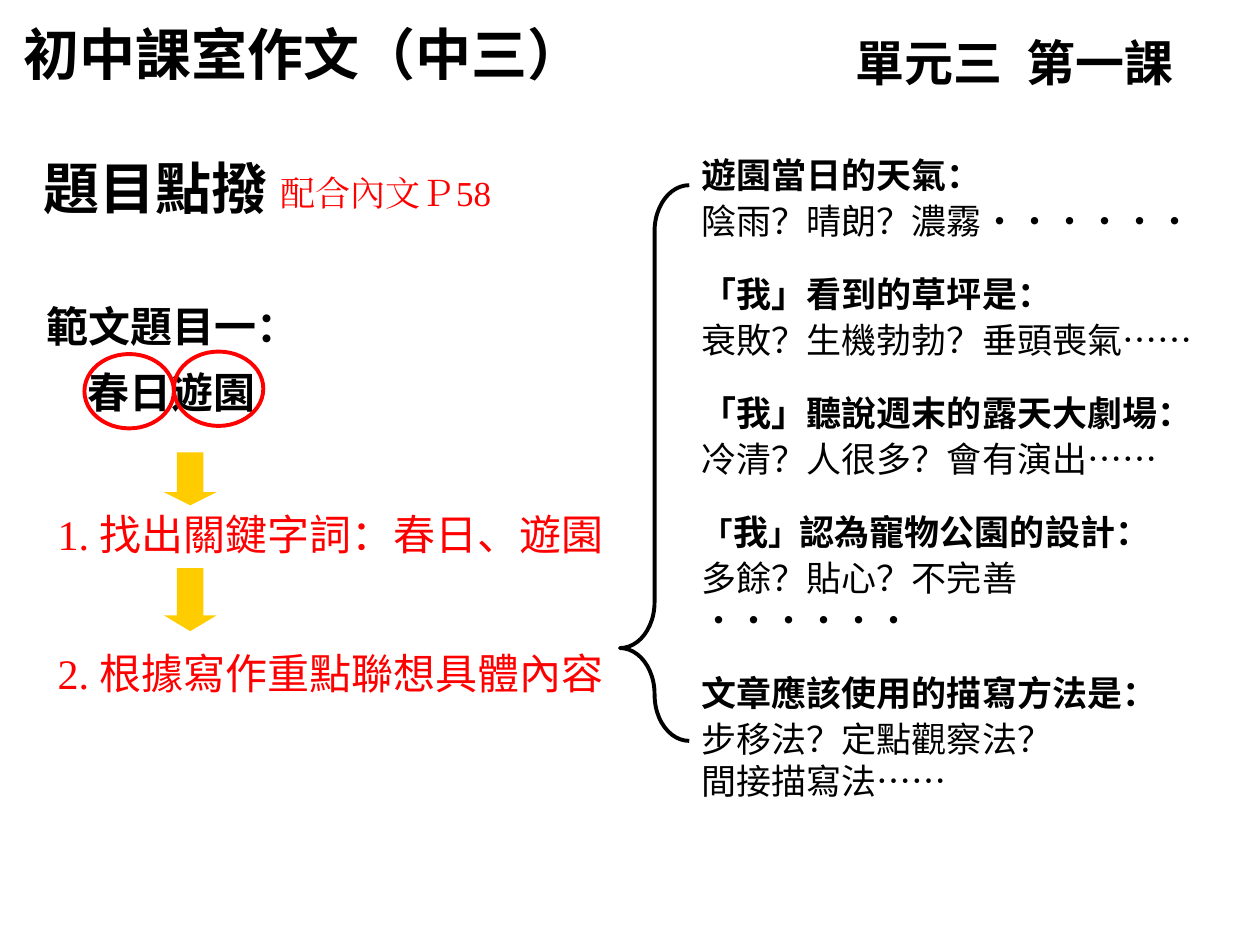
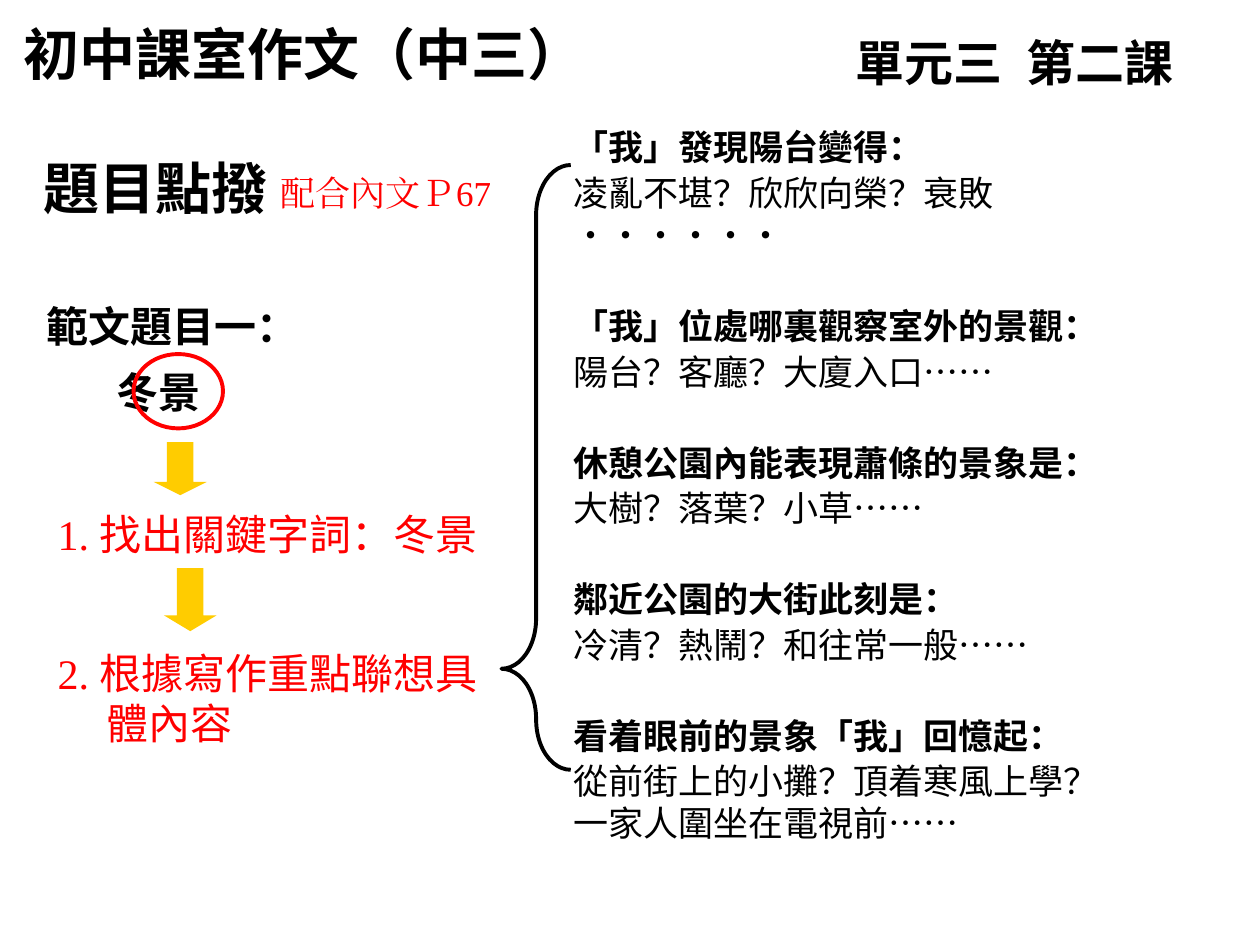
from dataclasses import dataclass

from lxml import etree
from pptx import Presentation
from pptx import util as u
from pptx.dml.color import RGBColor
from pptx.enum import shapes, text
from pptx.oxml import ns


@dataclass(frozen=True)
class Theme:
    """Colours, fonts and type sizes shared by the slides."""
    ink: str = "000000"
    accent: str = "FF0000"
    arrow: str = "FFCC00"
    title_font: str = "Karla"
    label_font: str = "Arial"
    cjk_font: str = "DejaVu Sans"
    dots_font: str = "Noto Sans CJK SC"
    number_font: str = "Times New Roman"
    title: int = 32
    lesson: int = 28
    step: int = 24
    body: int = 20
    small: int = 18
    line: float = 2.25


T = Theme()


@dataclass(frozen=True)
class Box:
    """A rectangle in inches."""
    x: float
    y: float
    w: float
    h: float

    def inner(self, dx, dy, w, h):
        """Return a box placed relative to this one."""
        return Box(self.x + dx, self.y + dy, w, h)

    def lengths(self):
        """Return left, top, width and height as lengths."""
        return [u.Inches(v) for v in (self.x, self.y, self.w, self.h)]


def write(p, words, size=T.body, font=T.cjk_font, color=T.ink, bold=False):
    """Add formatted text to a paragraph, breaking lines at newlines."""
    for i, line in enumerate(words.split("\n")):
        if i:
            p.add_line_break()
        r = p.add_run()
        r.text = line
        r.font.size = u.Pt(size)
        r.font.name = font
        r.font.bold = bold
        r.font.color.rgb = RGBColor.from_string(color)
        ea = etree.SubElement(r._r.get_or_add_rPr(), ns.qn("a:ea"))
        ea.set("typeface", font)


def add_frame(s, box):
    """Add a wrapping text box and return its text frame."""
    tf = s.shapes.add_textbox(*box.lengths()).text_frame
    tf.word_wrap = True
    tf.auto_size = text.MSO_AUTO_SIZE.SHAPE_TO_FIT_TEXT
    return tf


def add_label(s, box, words, **style):
    """Add a text box with one paragraph and return the paragraph."""
    p = add_frame(s, box).paragraphs[0]
    write(p, words, **style)
    return p


def indent(p, left, first=0):
    """Set the left margin and first-line indent in inches."""
    pPr = p._p.get_or_add_pPr()
    pPr.set("marL", str(u.Inches(left)))
    pPr.set("indent", str(u.Inches(first)))


def add_figure(s, kind, box, fill=None, line=None, adjust=()):
    """Add a preset shape with the given fill, outline and adjustments."""
    sp = s.shapes.add_shape(kind, *box.lengths())
    sp.shadow.inherit = False
    for i, value in enumerate(adjust):
        sp.adjustments[i] = value
    if fill:
        sp.fill.solid()
        sp.fill.fore_color.rgb = RGBColor.from_string(fill)
    else:
        sp.fill.background()
    if line:
        sp.line.color.rgb = RGBColor.from_string(line)
        sp.line.width = u.Pt(T.line)
    else:
        sp.line.fill.background()


def add_header(s, box, lesson):
    """Place the course title and the lesson name."""
    add_label(s, box.inner(0.09, 0.11, 5.22, 0.63), "初中課室作文（中三）",
              size=T.title, font=T.title_font, bold=True)
    p = add_frame(s, box.inner(6.69, 0.21, 3.35, 0.57)).paragraphs[0]
    tabs = etree.SubElement(p._p.get_or_add_pPr(), ns.qn("a:tabLst"))
    etree.SubElement(tabs, ns.qn("a:tab"), pos=str(u.Inches(1.36)), algn="l")
    write(p, f"單元三\t{lesson}", size=T.lesson, font=T.title_font, bold=True)


def add_topic(s, box, page, topic, topic_indent, circles):
    """Place the section heading, the essay topic and its circled words."""
    add_label(s, box.inner(0, 0, 3.08, 0.63), "題目點撥",
              size=T.title, font=T.label_font, bold=True)
    add_label(s, box.inner(1.88, 0.14, 2.47, 0.43), f"配合內文Ｐ{page}",
              font=T.number_font, color=T.accent)
    tf = add_frame(s, box.inner(0.02, 1.05, 5, 1.14))
    for p, words, left in ((tf.paragraphs[0], "範文題目一：", 0),
                           (tf.add_paragraph(), topic, topic_indent)):
        p.line_spacing = 1.3
        indent(p, left)
        write(p, words, size=T.step, bold=True)
    for dx, dy in circles:
        add_figure(s, shapes.MSO_SHAPE.OVAL, box.inner(dx, dy, 0.71, 0.59), line=T.accent)


def add_steps(s, box, keywords, first_arrow, last_width):
    """Place the two numbered steps, each under its arrow."""
    arrows = ((*first_arrow, 0.42, 0.25), (0.94, 1, 0.5, 0.3))
    for dx, dy, h, head in arrows:
        add_figure(s, shapes.MSO_SHAPE.DOWN_ARROW, box.inner(dx, dy, 0.42, h),
                   fill=T.arrow, adjust=(0.5, head))
    steps = ((0.48, box.w, f"找出關鍵字詞：{keywords}"),
             (1.58, last_width, "根據寫作重點聯想具體內容"))
    for n, (dy, w, words) in enumerate(steps, 1):
        p = add_label(s, box.inner(0, dy, w, 0.5), f"{n}. ", size=T.step,
                      font=T.number_font, color=T.accent)
        indent(p, 0.39, -0.39)
        write(p, words, size=T.step, color=T.accent)


def add_questions(s, box, questions, gap):
    """Place the guiding questions, each a bold heading over its hints."""
    tf = add_frame(s, box)
    for i, (heading, hints, dots) in enumerate(questions):
        p = tf.add_paragraph() if i else tf.paragraphs[0]
        if i:
            p.space_before = u.Pt(gap)
        pieces = [(heading, {})] if isinstance(heading, str) else heading
        for words, style in pieces:
            write(p, words, bold=True, **style)
        p = tf.add_paragraph()
        p.space_before = u.Pt(2)
        write(p, hints)
        write(p, dots, font=T.dots_font)


def add_lesson(prs, lesson, topic, steps, brace, turn, questions_box, questions, gap):
    """Build one lesson slide."""
    s = prs.slides.add_slide(prs.slide_layouts[6])
    add_header(s, Box(0, 0, 10, 0.8), lesson)
    add_topic(s, Box(0.25, 1.17, 5, 2.2), **topic)
    add_steps(s, Box(0.36, 3.51, 4.96, 2.1), **steps)
    add_figure(s, shapes.MSO_SHAPE.LEFT_BRACE, brace, line=T.ink, adjust=(turn, 0.833))
    add_questions(s, questions_box, questions, gap)


DOTS, ELLIPSIS = "······", "……"
BRACKET = dict(size=T.small, font=T.label_font)

LESSONS = (
    dict(
        lesson="第一課",
        topic=dict(page=58, topic="春日遊園", topic_indent=0.33,
                   circles=((0.42, 1.64), (1.13, 1.62))),
        steps=dict(keywords="春日、遊園", first_arrow=(0.94, 0.08), last_width=4.72),
        brace=Box(4.92, 1.47, 0.55, 4.41), turn=0.664,
        questions_box=Box(5.47, 1.17, 4.17, 4.99), gap=18,
        questions=(
            ("遊園當日的天氣：", "陰雨？晴朗？濃霧", DOTS),
            ("「我」看到的草坪是：", "衰敗？生機勃勃？垂頭喪氣", ELLIPSIS),
            ("「我」聽說週末的露天大劇場：", "冷清？人很多？會有演出", ELLIPSIS),
            ((("「", BRACKET), ("我", dict(font=T.label_font)), ("」", BRACKET),
              ("認為寵物公園的設計：", {})), "多餘？貼心？不完善", DOTS),
            ("文章應該使用的描寫方法是：", "步移法？定點觀察法？\n間接描寫法", ELLIPSIS),
        ),
    ),
    dict(
        lesson="第二課",
        topic=dict(page=67, topic="冬景", topic_indent=0.56, circles=((0.81, 1.64),)),
        steps=dict(keywords="冬景", first_arrow=(0.86, 0), last_width=3.62),
        brace=Box(3.98, 1.31, 0.55, 4.8), turn=0.723,
        questions_box=Box(4.45, 0.95, 4.65, 5.59), gap=28,
        questions=(
            ("「我」發現陽台變得：", "凌亂不堪？欣欣向榮？衰敗", DOTS),
            ("「我」位處哪裏觀察室外的景觀：", "陽台？客廳？大廈入口", ELLIPSIS),
            ("休憩公園內能表現蕭條的景象是：", "大樹？落葉？小草", ELLIPSIS),
            ("鄰近公園的大街此刻是：", "冷清？熱鬧？和往常一般", ELLIPSIS),
            ("看着眼前的景象「我」回憶起：",
             "從前街上的小攤？頂着寒風上學？\n一家人圍坐在電視前", ELLIPSIS),
        ),
    ),
)


def main():
    """Build and save the presentation."""
    prs = Presentation()
    prs.slide_width, prs.slide_height = u.Inches(10), u.Inches(7.5)
    for lesson in LESSONS:
        add_lesson(prs, **lesson)
    prs.save("out.pptx")


if __name__ == "__main__":
    main()
